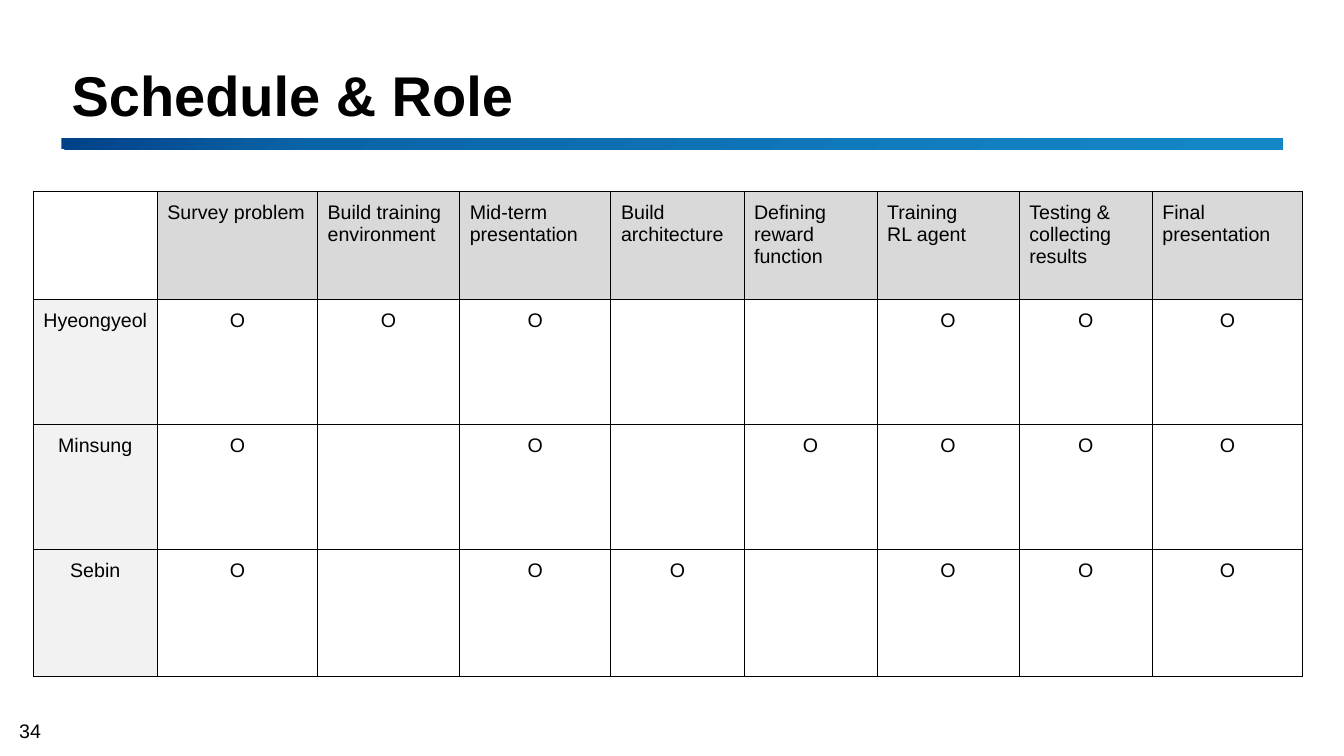
from lxml.etree import SubElement
from pptx import Presentation
from pptx.dml.color import RGBColor
from pptx.enum.shapes import MSO_SHAPE
from pptx.enum.text import MSO_ANCHOR, PP_ALIGN
from pptx.oxml import parse_xml
from pptx.oxml.ns import nsdecls, qn
from pptx.util import Inches, Pt

COLUMN_WIDTHS = [1.23, 1.59, 1.41, 1.5, 1.32, 1.32, 1.41, 1.32, 1.49]
ROW_HEIGHTS = [1.07, 1.24, 1.24, 1.26]
TASKS = ["Survey problem", "Build training environment", "Mid-term\npresentation",
         "Build architecture", "Defining\nreward\nfunction", "Training\nRL agent",
         "Testing & collecting results", "Final\npresentation"]
ROLES = {"Hyeongyeol": "OOO--OOO", "Minsung": "O-O-OOOO", "Sebin": "O-OO-OOO"}
BAR_STOPS = [(0, "004187"), (21, "0A64A8"), (96, "1487C8")]


def rgb(color):
    return RGBColor.from_string(color)


def set_font(p, size, bold=False):
    p.font.name = "Arial"
    p.font.size = Pt(size)
    p.font.bold = bold
    p.font.color.rgb = rgb("000000")


def add_title(s, text):
    title = s.shapes.title
    title.left, title.top = Inches(0.61), Inches(0.33)
    title.width, title.height = Inches(12.07), Inches(0.99)
    tf = title.text_frame
    tf.text = text
    tf.vertical_anchor = MSO_ANCHOR.BOTTOM
    p = tf.paragraphs[0]
    p.alignment = PP_ALIGN.LEFT
    p.line_spacing = Pt(36)
    set_font(p, 40, bold=True)


def add_gradient_bar(s):
    bar = s.shapes.add_shape(MSO_SHAPE.RECTANGLE, Inches(0.61), Inches(1.37),
                             Inches(12.11), Inches(0.11))
    bar.shadow.inherit = False
    bar.line.fill.background()
    stops = "".join(f'<a:gs pos="{pos * 1000}"><a:srgbClr val="{color}"/></a:gs>'
                    for pos, color in BAR_STOPS)
    gradient = parse_xml(f'<a:gradFill {nsdecls("a")} rotWithShape="1"><a:gsLst>{stops}'
                         '</a:gsLst><a:lin ang="2700000" scaled="0"/></a:gradFill>')
    bar._element.spPr.find(qn("a:prstGeom")).addnext(gradient)


def add_page_number(s, number):
    box = s.shapes.add_textbox(Inches(0.19), Inches(7.13), Inches(0.45), Inches(0.24))
    tf = box.text_frame
    tf.margin_left = tf.margin_right = tf.margin_top = tf.margin_bottom = 0
    tf.vertical_anchor = MSO_ANCHOR.BOTTOM
    tf.text = number
    set_font(tf.paragraphs[0], 14)


def add_borders(cell):
    tcPr = cell._tc.get_or_add_tcPr()
    for side in ("lnL", "lnR", "lnT", "lnB"):
        line = SubElement(tcPr, qn(f"a:{side}"), w=str(Pt(0.75)))
        fill = SubElement(line, qn("a:solidFill"))
        SubElement(fill, qn("a:srgbClr"), val="000000")


def fill_cell(cell, text, color, align):
    add_borders(cell)
    if color:
        cell.fill.solid()
        cell.fill.fore_color.rgb = rgb(color)
    else:
        cell.fill.background()
    cell.margin_left = cell.margin_right = Inches(0.1)
    cell.margin_top = cell.margin_bottom = Inches(0.1)
    cell.text = text
    for p in cell.text_frame.paragraphs:
        p.alignment = align
        set_font(p, 14)


def add_role_table(s):
    rows = [["", *TASKS]]
    rows += [[name, *marks.replace("-", " ")] for name, marks in ROLES.items()]
    table = s.shapes.add_table(len(rows), len(COLUMN_WIDTHS), Inches(0.33), Inches(1.9),
                               Inches(sum(COLUMN_WIDTHS)), Inches(sum(ROW_HEIGHTS))).table
    table.first_row = table.horz_banding = False
    for column, width in zip(table.columns, COLUMN_WIDTHS):
        column.width = Inches(width)
    for row, height in zip(table.rows, ROW_HEIGHTS):
        row.height = Inches(height)
    for i, row in enumerate(rows):
        for j, text in enumerate(row):
            if i == 0:
                color = "D9D9D9" if j else None
            else:
                color = None if j else "F2F2F2"
            align = PP_ALIGN.CENTER if i else PP_ALIGN.LEFT
            fill_cell(table.cell(i, j), text.strip(), color, align)


def main():
    prs = Presentation()
    prs.slide_width, prs.slide_height = Inches(13.33), Inches(7.5)
    s = prs.slides.add_slide(prs.slide_layouts[5])
    add_page_number(s, "34")
    add_gradient_bar(s)
    add_title(s, "Schedule & Role")
    add_role_table(s)
    prs.save("out.pptx")


if __name__ == "__main__":
    main()
